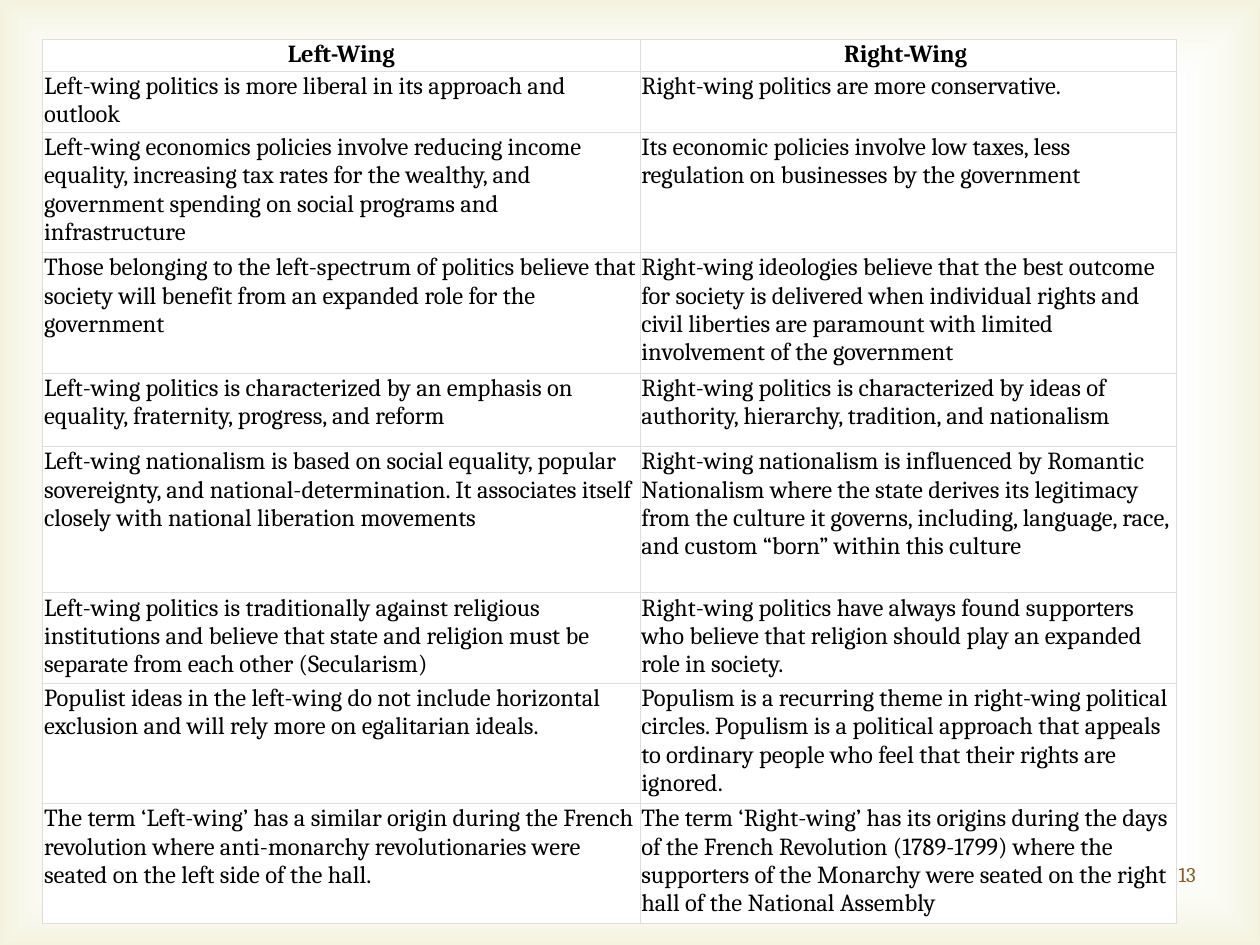
from dataclasses import dataclass

from lxml.etree import SubElement
from pptx import Presentation
from pptx.dml.color import RGBColor as Color
from pptx.enum.shapes import MSO_SHAPE as Shape
from pptx.enum.text import MSO_ANCHOR as Anchor, PP_ALIGN as Align
from pptx.oxml import parse_xml
from pptx.oxml.ns import nsdecls, qn
from pptx.presentation import Presentation as Deck
from pptx.slide import Slide
from pptx.table import _Cell as Cell
from pptx.text.text import _Paragraph as Para
from pptx.util import Inches, Pt


@dataclass(frozen=True)
class Theme:
    font: str = "Cambria"
    ink: str = "000000"
    paper: str = "FFFFFF"
    glow: str = "D1CA75"
    border: str = "DDDDDD"
    number: str = "895D1D"
    body_size: float = 14
    number_size: float = 12
    border_width: float = 0.6
    cell_inset: float = 0.01


@dataclass(frozen=True)
class Comparison:
    left: str
    right: str
    height: float
    header: bool = False


THEME = Theme()
COLUMN_WIDTHS = (4.74, 4.26)
COMPARISONS = (
    Comparison("Left-Wing", "Right-Wing ", 0.25, header=True),
    Comparison(
        "Left-wing politics is more liberal in its approach and outlook",
        "Right-wing politics are more conservative.",
        0.48,
    ),
    Comparison(
        "Left-wing economics policies involve reducing income equality, increasing tax rates "
        "for the wealthy, and government spending on social programs and infrastructure",
        "Its economic policies involve low taxes, less regulation on businesses by the government",
        0.93,
    ),
    Comparison(
        "Those belonging to the left-spectrum of politics believe that society will benefit "
        "from an expanded role for the government",
        "Right-wing ideologies believe that the best outcome for society is delivered when "
        "individual rights and civil liberties are paramount with limited involvement of "
        "the government",
        0.96,
    ),
    Comparison(
        "Left-wing politics is characterized by an emphasis on equality, fraternity, progress, "
        "and reform",
        "Right-wing politics is characterized by ideas of authority, hierarchy, tradition, "
        "and nationalism",
        0.58,
    ),
    Comparison(
        "Left-wing nationalism is based on social equality, popular sovereignty, and "
        "national-determination. It associates itself closely with national liberation movements",
        "Right-wing nationalism is influenced by Romantic Nationalism where the state derives "
        "its legitimacy from the culture it governs, including, language, race, and custom "
        "“born” within this culture",
        1.16,
    ),
    Comparison(
        "Left-wing politics is traditionally against religious institutions and believe that "
        "state and religion must be separate from each other (Secularism)",
        "Right-wing politics have always found supporters who believe that religion should "
        "play an expanded role in society.",
        0.71,
    ),
    Comparison(
        "Populist ideas in the left-wing do not include horizontal exclusion and will rely "
        "more on egalitarian ideals.",
        "Populism is a recurring theme in right-wing political circles. Populism is a political "
        "approach that appeals to ordinary people who feel that their rights are ignored.",
        0.93,
    ),
    Comparison(
        "The term ‘Left-wing’ has a similar origin during the French revolution where "
        "anti-monarchy revolutionaries were seated on the left side of the hall.",
        "The term ‘Right-wing’ has its origins during the days of the French Revolution "
        "(1789-1799) where the supporters of the Monarchy were seated on the right hall of "
        "the National Assembly",
        0.93,
    ),
)


def add_span(para: Para, text: str, size: float, color: str, bold: bool = False) -> None:
    span = para.add_run()
    span.text = text
    span.font.name = THEME.font
    span.font.size = Pt(size)
    span.font.bold = bold
    span.font.color.rgb = Color.from_string(color)


def draw_glow(page: Slide, deck: Deck) -> None:
    panel = page.shapes.add_shape(Shape.RECTANGLE, 0, 0, deck.slide_width, deck.slide_height)
    panel.shadow.inherit = False
    panel.line.fill.background()
    panel.fill.background()
    stops = "".join(
        f'<a:gs pos="{position}"><a:srgbClr val="{color}"><a:alpha val="{alpha}"/></a:srgbClr></a:gs>'
        for position, color, alpha in ((83000, THEME.paper, 11000), (100000, THEME.glow, 23000))
    )
    gradient = parse_xml(
        f'<a:gradFill {nsdecls("a")} rotWithShape="1"><a:gsLst>{stops}</a:gsLst>'
        '<a:path path="rect"><a:fillToRect l="50000" t="50000" r="50000" b="50000"/></a:path>'
        "</a:gradFill>"
    )
    properties = panel._element.spPr
    properties.replace(properties.find(qn("a:noFill")), gradient)


def draw_page_number(page: Slide, number: str) -> None:
    box = page.shapes.add_textbox(Inches(7.26), Inches(6.74), Inches(2.33), Inches(0.4))
    frame = box.text_frame
    frame.word_wrap = True
    frame.vertical_anchor = Anchor.MIDDLE
    para = frame.paragraphs[0]
    para.alignment = Align.RIGHT
    add_span(para, number, THEME.number_size, THEME.number)


def add_borders(cell: Cell) -> None:
    properties = cell._tc.get_or_add_tcPr()
    for index, side in enumerate(("lnL", "lnR", "lnT", "lnB")):
        line = SubElement(properties, qn(f"a:{side}"), w=str(Pt(THEME.border_width)))
        fill = SubElement(line, qn("a:solidFill"))
        SubElement(fill, qn("a:srgbClr"), val=THEME.border)
        properties.insert(index, line)


def fill_cell(cell: Cell, text: str, header: bool) -> None:
    inset = Inches(THEME.cell_inset)
    cell.margin_left = cell.margin_right = cell.margin_top = cell.margin_bottom = inset
    cell.fill.solid()
    cell.fill.fore_color.rgb = Color.from_string(THEME.paper)
    add_borders(cell)
    para = cell.text_frame.paragraphs[0]
    para.alignment = Align.CENTER if header else Align.LEFT
    add_span(para, text, THEME.body_size, THEME.ink, header)


def draw_comparison_table(page: Slide) -> None:
    height = sum(comparison.height for comparison in COMPARISONS)
    table = page.shapes.add_table(
        len(COMPARISONS), len(COLUMN_WIDTHS),
        Inches(0.34), Inches(0.31), Inches(sum(COLUMN_WIDTHS)), Inches(height),
    ).table
    table.horz_banding = False
    for column, width in zip(table.columns, COLUMN_WIDTHS):
        column.width = Inches(width)
    for row, comparison in zip(table.rows, COMPARISONS):
        row.height = Inches(comparison.height)
        for cell, text in zip(row.cells, (comparison.left, comparison.right)):
            fill_cell(cell, text, comparison.header)


def main() -> None:
    deck = Presentation()
    deck.slide_width = Inches(10)
    deck.slide_height = Inches(7.5)
    page = deck.slides.add_slide(deck.slide_layouts[6])
    draw_glow(page, deck)
    draw_page_number(page, "13")
    draw_comparison_table(page)
    deck.save("out.pptx")


if __name__ == "__main__":
    main()
